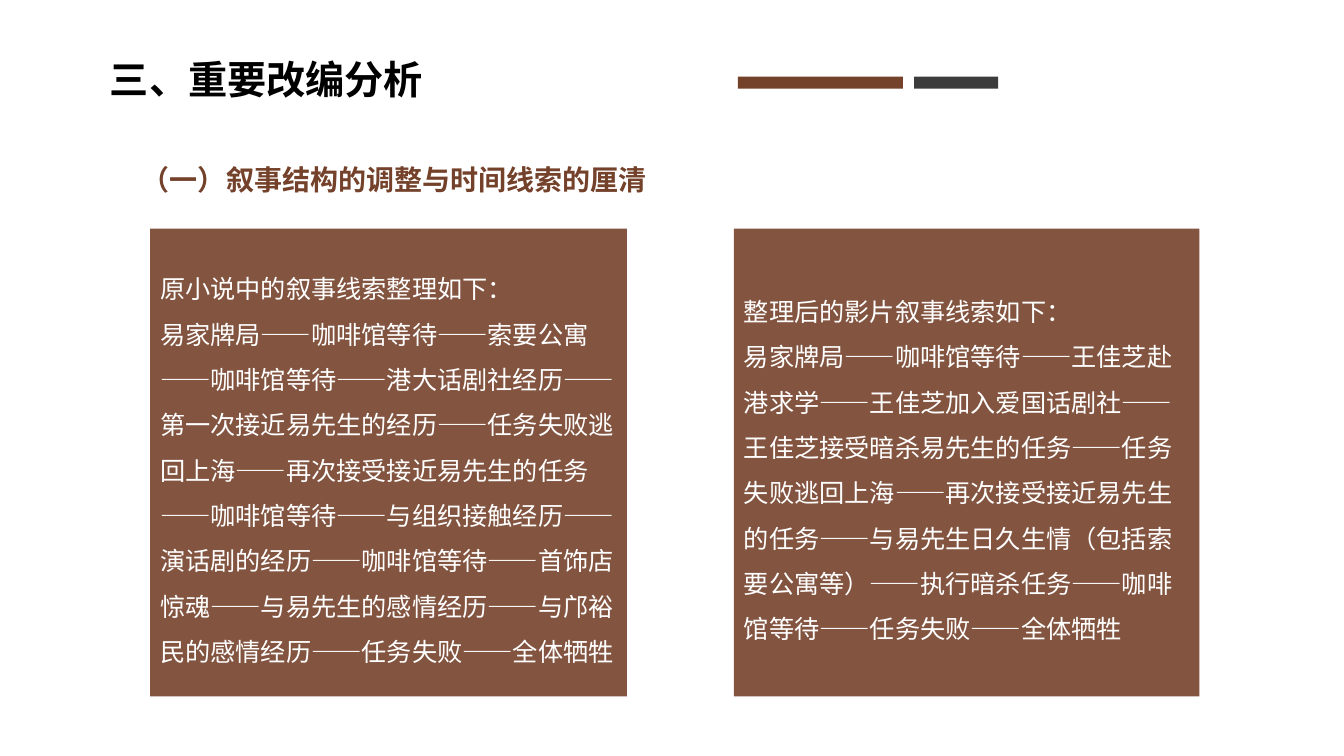
from dataclasses import dataclass

from lxml.etree import SubElement
from pptx import Presentation
from pptx.dml.color import RGBColor
from pptx.enum.lang import MSO_LANGUAGE_ID
from pptx.enum.shapes import MSO_SHAPE
from pptx.enum.text import MSO_ANCHOR, MSO_AUTO_SIZE, PP_ALIGN
from pptx.oxml.ns import qn
from pptx.util import Pt


@dataclass(frozen=True)
class Theme:
    brown: str = "74412A"
    dark: str = "3C3C3C"
    black: str = "000000"
    white: str = "FFFFFF"
    heading_font: str = "Noto Sans CJK SC"
    body_font: str = "Arial"
    title_size: int = 28
    subtitle_size: int = 20
    body_size: int = 18
    line_spacing: float = 1.5
    card_opacity: int = 89


class SlideBuilder:
    """Adds styled elements to one slide."""

    def __init__(self, slide, theme):
        self.s = slide
        self.theme = theme

    def add_lines(self, tf, lines, size, color, font, bold=False, spacing=None):
        for i, line in enumerate(lines):
            p = tf.paragraphs[0] if i == 0 else tf.add_paragraph()
            p.alignment = PP_ALIGN.LEFT
            if spacing:
                p.line_spacing = spacing
            r = p.add_run()
            r.text = line
            r.font.size = Pt(size)
            r.font.bold = bold
            r.font.color.rgb = RGBColor.from_string(color)
            r.font.name = font
            r.font.language_id = MSO_LANGUAGE_ID.SIMPLIFIED_CHINESE
            ea = SubElement(r.font._element, qn("a:ea"))
            ea.set("typeface", self.theme.heading_font)

    def title(self, text, left, top, width, height):
        sp = self.s.shapes.title
        sp.left, sp.top, sp.width, sp.height = map(Pt, (left, top, width, height))
        tf = sp.text_frame
        tf.word_wrap = False
        tf.auto_size = MSO_AUTO_SIZE.NONE
        tf.vertical_anchor = MSO_ANCHOR.TOP
        t = self.theme
        self.add_lines(tf, [text], t.title_size, t.black, t.heading_font, bold=True)

    def subtitle(self, text, left, top, width, height):
        sp = self.s.shapes.add_textbox(*map(Pt, (left, top, width, height)))
        tf = sp.text_frame
        tf.word_wrap = True
        t = self.theme
        self.add_lines(tf, [text], t.subtitle_size, t.brown, t.heading_font,
                       bold=True, spacing=t.line_spacing)

    def bar(self, color, left, top, width, height):
        sp = self.s.shapes.add_shape(
            MSO_SHAPE.RECTANGLE, *map(Pt, (left, top, width, height)))
        sp.shadow.inherit = False
        sp.fill.solid()
        sp.fill.fore_color.rgb = RGBColor.from_string(color)
        sp.line.fill.background()
        return sp

    def card(self, lines, left, top, width, height):
        t = self.theme
        sp = self.bar(t.brown, left, top, width, height)
        clr = sp._element.spPr.find(qn("a:solidFill")).find(qn("a:srgbClr"))
        SubElement(clr, qn("a:alpha")).set("val", str(t.card_opacity * 1000))
        tf = sp.text_frame
        tf.word_wrap = True
        tf.vertical_anchor = MSO_ANCHOR.MIDDLE
        self.add_lines(tf, lines, t.body_size, t.white, t.body_font,
                       spacing=t.line_spacing)


NOVEL = [
    "原小说中的叙事线索整理如下：",
    "易家牌局——咖啡馆等待——索要公寓——咖啡馆等待——港大话剧社经历——"
    "第一次接近易先生的经历——任务失败逃回上海——再次接受接近易先生的任务——"
    "咖啡馆等待——与组织接触经历——演话剧的经历——咖啡馆等待——首饰店惊魂——"
    "与易先生的感情经历——与邝裕民的感情经历——任务失败——全体牺牲",
]
FILM = [
    "整理后的影片叙事线索如下：",
    "易家牌局——咖啡馆等待——王佳芝赴港求学——王佳芝加入爱国话剧社——"
    "王佳芝接受暗杀易先生的任务——任务失败逃回上海——再次接受接近易先生的任务——"
    "与易先生日久生情（包括索要公寓等）——执行暗杀任务——咖啡馆等待——"
    "任务失败——全体牺牲",
]


def main():
    prs = Presentation()
    prs.slide_width, prs.slide_height = Pt(960), Pt(540)
    theme = Theme()
    b = SlideBuilder(prs.slides.add_slide(prs.slide_layouts[5]), theme)
    b.title("三、重要改编分析", 71.3, 36, 257.8, 41)
    for color, left, width in ((theme.brown, 527, 118), (theme.dark, 653, 60)):
        b.bar(color, left, 54.7, width, 8.6)
    b.subtitle("（一）叙事结构的调整与时间线索的厘清", 94.3, 100.8, 763.2, 39.6)
    for lines, left, width in ((NOVEL, 107.3, 340.6), (FILM, 524.2, 332.6)):
        b.card(lines, left, 163.4, width, 334)
    prs.save("out.pptx")


if __name__ == "__main__":
    main()
